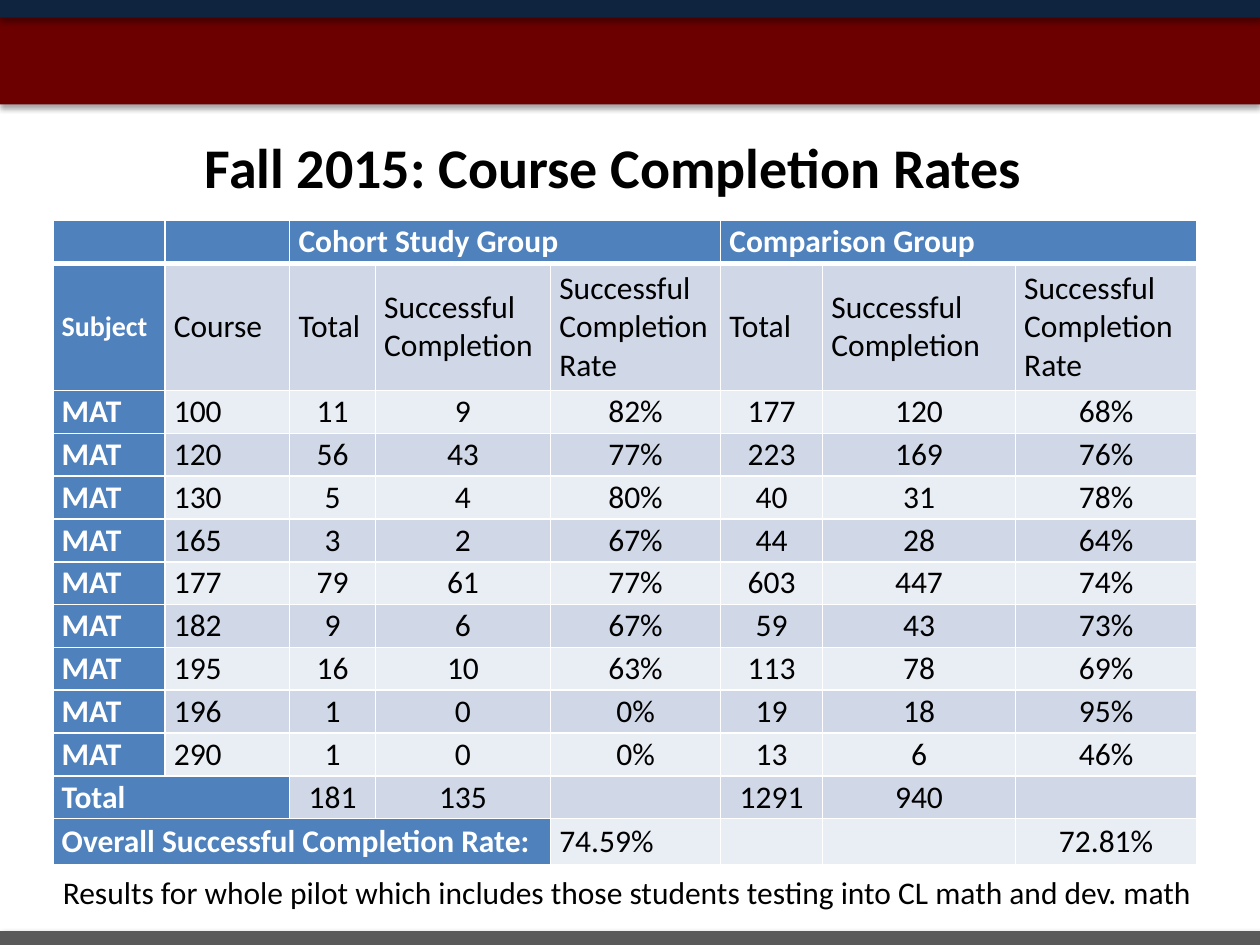
from lxml import etree
from pptx import Presentation
from pptx.dml.color import RGBColor
from pptx.enum.shapes import MSO_SHAPE
from pptx.enum.text import MSO_ANCHOR, PP_ALIGN
from pptx.oxml import parse_xml
from pptx.oxml.ns import nsdecls
from pptx.util import Inches, Pt

NAVY = RGBColor(0x0F, 0x24, 0x3E)
MAROON = RGBColor(0x6C, 0x00, 0x00)
GRAY = RGBColor(0x59, 0x59, 0x59)
BLUE = RGBColor(0x4F, 0x81, 0xBD)
BANDS = RGBColor(0xE9, 0xED, 0xF4), RGBColor(0xD0, 0xD8, 0xE8)
WHITE = RGBColor(0xFF, 0xFF, 0xFF)
BLACK = RGBColor(0x00, 0x00, 0x00)
FONT = "Calibri"

# box, colour, shadow (opacity %, blur pt, distance pt, angle)
BARS = [
    ((-0.01, 7.39, 10.01, 0.22), GRAY, (43, 4, 3, 45)),
    ((0, 0, 10, 0.83), MAROON, (35, 3.1, 1.8, 90)),
    ((0, -0.08, 10, 0.22), NAVY, (35, 3.1, 1.8, 90)),
]
TITLE = "Fall 2015: Course Completion Rates "
NOTE = ("Results for whole pilot which includes those students "
        "testing into CL math and dev. math")

GROUPS = ["", "", "Cohort Study Group", "", "", "Comparison Group", "", ""]
MEASURES = ["Total", "Successful Completion", "Successful Completion Rate"]
COURSES = [
    (100, 11, 9, "82%", 177, 120, "68%"),
    (120, 56, 43, "77%", 223, 169, "76%"),
    (130, 5, 4, "80%", 40, 31, "78%"),
    (165, 3, 2, "67%", 44, 28, "64%"),
    (177, 79, 61, "77%", 603, 447, "74%"),
    (182, 9, 6, "67%", 59, 43, "73%"),
    (195, 16, 10, "63%", 113, 78, "69%"),
    (196, 1, 0, "0%", 19, 18, "95%"),
    (290, 1, 0, "0%", 13, 6, "46%"),
]
ROWS = [
    GROUPS,
    ["Subject", "Course"] + MEASURES * 2,
    *[("MAT",) + course for course in COURSES],
    ["Total", "", 181, 135, "", 1291, 940, ""],
    ["Overall Successful Completion Rate:", "", "", "", "74.59%", "", "", "72.81%"],
]
LAST = len(ROWS) - 1
# row, first column, last column
SPANS = [(0, 2, 4), (0, 5, 7), (LAST - 1, 0, 1), (LAST, 0, 3)]
WIDTHS = [0.89, 0.99, 0.68, 1.39, 1.35, 0.81, 1.53, 1.44]
HEIGHTS = [0.34, 1.01] + [0.34] * (len(ROWS) - 3) + [0.37]


def style(para, size, color, bold=False):
    for run in para.runs:
        font = run.font
        font.name, font.size, font.bold = FONT, Pt(size), bold
        font.color.rgb = color


def add_bar(slide, box, color, shadow):
    bar = slide.shapes.add_shape(MSO_SHAPE.RECTANGLE, *map(Inches, box))
    bar.fill.solid()
    bar.fill.fore_color.rgb = color
    bar.line.fill.background()
    bar.shadow.inherit = False
    alpha, blur, dist, angle = shadow
    effects = bar._element.spPr.find("{*}effectLst")
    effects.append(parse_xml(
        f'<a:outerShdw {nsdecls("a")} blurRad="{Pt(blur)}" dist="{Pt(dist)}" '
        f'dir="{angle * 60000}" algn="ctr" rotWithShape="0"><a:srgbClr val="000000">'
        f'<a:alpha val="{alpha * 1000}"/></a:srgbClr></a:outerShdw>'))


def add_text(slide, box, text, size, bold=False):
    frame = slide.shapes.add_textbox(*map(Inches, box)).text_frame
    frame.word_wrap = True
    frame.text = text
    style(frame.paragraphs[0], size, BLACK, bold)
    return frame


def set_borders(cell, row):
    """White lines, with a heavy one under the group headings."""
    props = cell._tc.get_or_add_tcPr()
    heavy = {(0, "lnB"), (1, "lnT")}
    for spot, side in enumerate(("lnL", "lnR", "lnT", "lnB")):
        width = Pt(3 if (row, side) in heavy else 1)
        props.insert(spot, parse_xml(
            f'<a:{side} {nsdecls("a")} w="{width}"><a:solidFill>'
            f'<a:srgbClr val="{WHITE}"/></a:solidFill></a:{side}>'))


def get_align(row, col):
    if row == 1 or (row == LAST and col < 5):
        return PP_ALIGN.JUSTIFY
    return PP_ALIGN.CENTER if row > 1 and col > 1 else PP_ALIGN.LEFT


def fill_cell(cell, row, col, value):
    head = row == 0 or col == 0
    cell.margin_left = cell.margin_right = Inches(0.07)
    cell.margin_top = cell.margin_bottom = 0
    cell.vertical_anchor = MSO_ANCHOR.MIDDLE
    cell.fill.solid()
    cell.fill.fore_color.rgb = BLUE if head else BANDS[row % 2]
    set_borders(cell, row)
    if value != "":
        cell.text_frame.text = str(value)
        para = cell.text_frame.paragraphs[0]
        para.alignment = get_align(row, col)
        size = 16 if (row, col) == (1, 0) else 18
        style(para, size, WHITE if head else BLACK, head)


def add_rates(slide):
    table = slide.shapes.add_table(
        len(ROWS), len(WIDTHS), Inches(0.42), Inches(1.75),
        Inches(sum(WIDTHS)), Inches(sum(HEIGHTS))).table
    for column, width in zip(table.columns, WIDTHS):
        column.width = Inches(width)
    for line, height in zip(table.rows, HEIGHTS):
        line.height = Inches(height)
    for row, values in enumerate(ROWS):
        for col, value in enumerate(values):
            fill_cell(table.cell(row, col), row, col, value)
    for row, first, last in SPANS:
        table.cell(row, first).merge(table.cell(row, last))


def main():
    prs = Presentation()
    prs.slide_width, prs.slide_height = Inches(10), Inches(7.5)
    slide = prs.slides.add_slide(prs.slide_layouts[6])
    for bar in BARS:
        add_bar(slide, *bar)
    title = add_text(slide, (0.42, 1, 9, 0.63), TITLE, 32, True)
    title.vertical_anchor = MSO_ANCHOR.MIDDLE
    title.paragraphs[0].alignment = PP_ALIGN.CENTER
    add_rates(slide)
    add_text(slide, (0.4, 6.88, 9.25, 0.4), NOTE, 18)
    prs.save("out.pptx")


if __name__ == "__main__":
    main()
